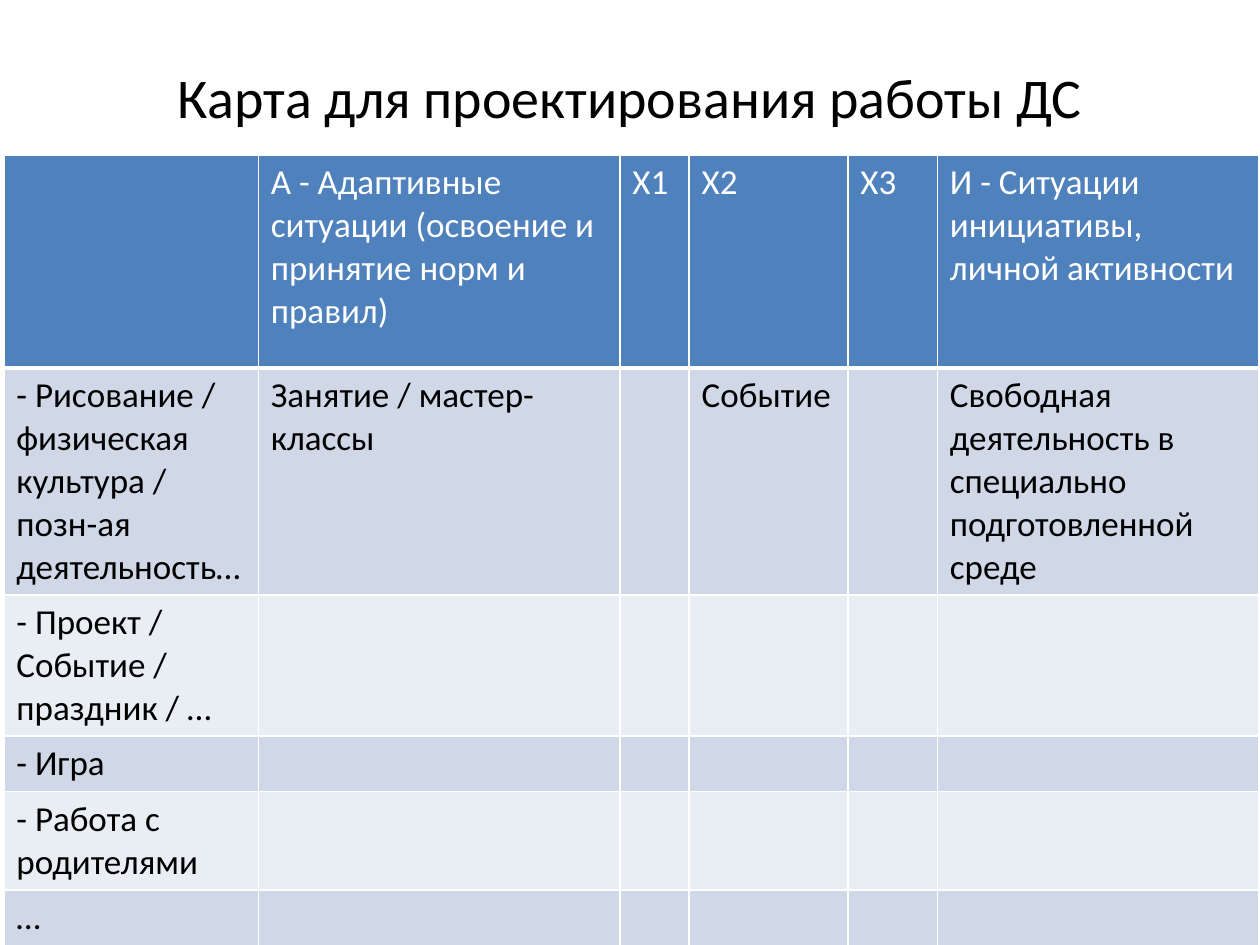
import pptx
import pptx.util
import pptx.dml.color
import pptx.enum.text
import pptx.oxml.ns
from lxml import etree

Inches, Pt = pptx.util.Inches, pptx.util.Pt
RGB = pptx.dml.color.RGBColor.from_string
COLORS = {"text": "000000", "white": "FFFFFF", "header": "4F81BD",
          "band_dark": "D0D8E8", "band_light": "E9EDF4"}


def add_border(cell, side, width):
    """Draw a white line of the given point width on side L, R, T or B."""
    qn = pptx.oxml.ns.qn
    ln = etree.SubElement(cell._tc.get_or_add_tcPr(), qn("a:ln" + side), w=str(Pt(width)))
    fill = etree.SubElement(ln, qn("a:solidFill"))
    etree.SubElement(fill, qn("a:srgbClr"), val=COLORS["white"])


prs = pptx.Presentation()
prs.slide_width, prs.slide_height = Inches(10), Inches(7.5)
s = prs.slides.add_slide(prs.slide_layouts[5])

# Title
title = s.shapes.title
title.left, title.top = Inches(0.5), Inches(0.3)
title.width, title.height = Inches(9), Inches(0.93)
tf = title.text_frame
tf.text = "Карта для проектирования работы ДС"
tf.vertical_anchor = pptx.enum.text.MSO_ANCHOR.MIDDLE
p = tf.paragraphs[0]
p.alignment = pptx.enum.text.PP_ALIGN.CENTER
p.font.size, p.font.name = Pt(32), "Calibri"
p.font.color.rgb = RGB(COLORS["text"])

# Planning table
rows = [
    ["", "А - Адаптивные ситуации (освоение и принятие норм и правил)",
     "Х1", "Х2", "Х3", "И - Ситуации инициативы, личной активности"],
    ["- Рисование / физическая культура / позн-ая деятельность…",
     "Занятие / мастер-классы", "", "Событие", "",
     "Свободная деятельность в специально подготовленной среде"],
    ["- Проект / Событие / праздник / …"],
    ["- Игра"],
    ["- Работа с родителями"],
    ["…"],
]
col_widths = [2.02, 2.87, 0.55, 1.26, 0.71, 2.55]
row_heights = [1.69] + [0.43] * 5

table = s.shapes.add_table(len(rows), len(col_widths), Inches(0.03), Inches(1.23),
                           Inches(sum(col_widths)), Inches(sum(row_heights))).table
for col, width in zip(table.columns, col_widths):
    col.width = Inches(width)

for i, texts in enumerate(rows):
    table.rows[i].height = Inches(row_heights[i])
    is_header = i == 0
    band = "header" if is_header else "band_dark" if i % 2 else "band_light"
    for j in range(len(col_widths)):
        cell = table.cell(i, j)
        for side in "LRTB":
            add_border(cell, side, 3 if is_header and side == "B" else 1)
        cell.fill.solid()
        cell.fill.fore_color.rgb = RGB(COLORS[band])
        if j < len(texts) and texts[j]:
            cell.text = texts[j]
            font = cell.text_frame.paragraphs[0].font
            font.size, font.name, font.bold = Pt(20), "Calibri", False
            font.color.rgb = RGB(COLORS["white" if is_header else "text"])

prs.save("out.pptx")
